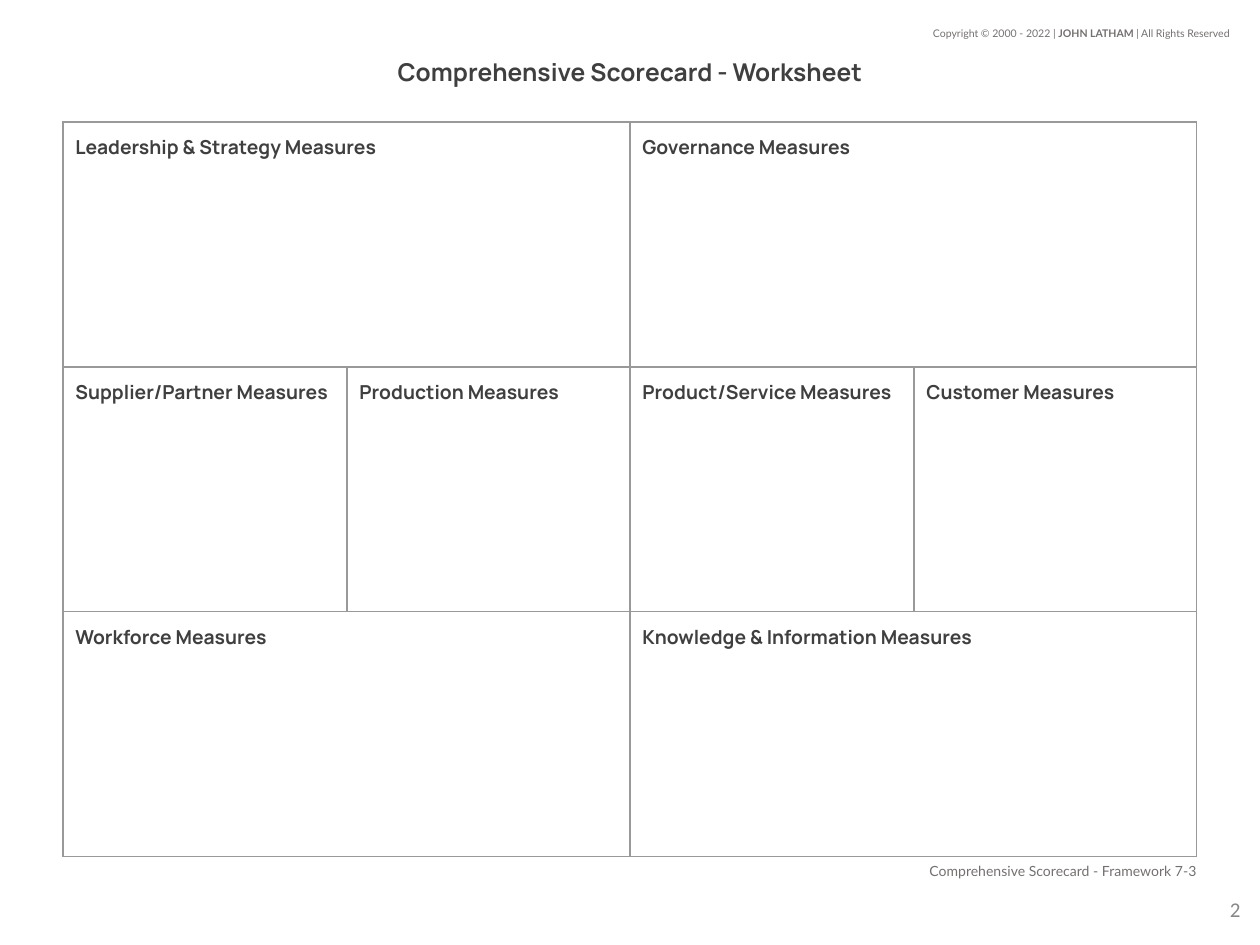
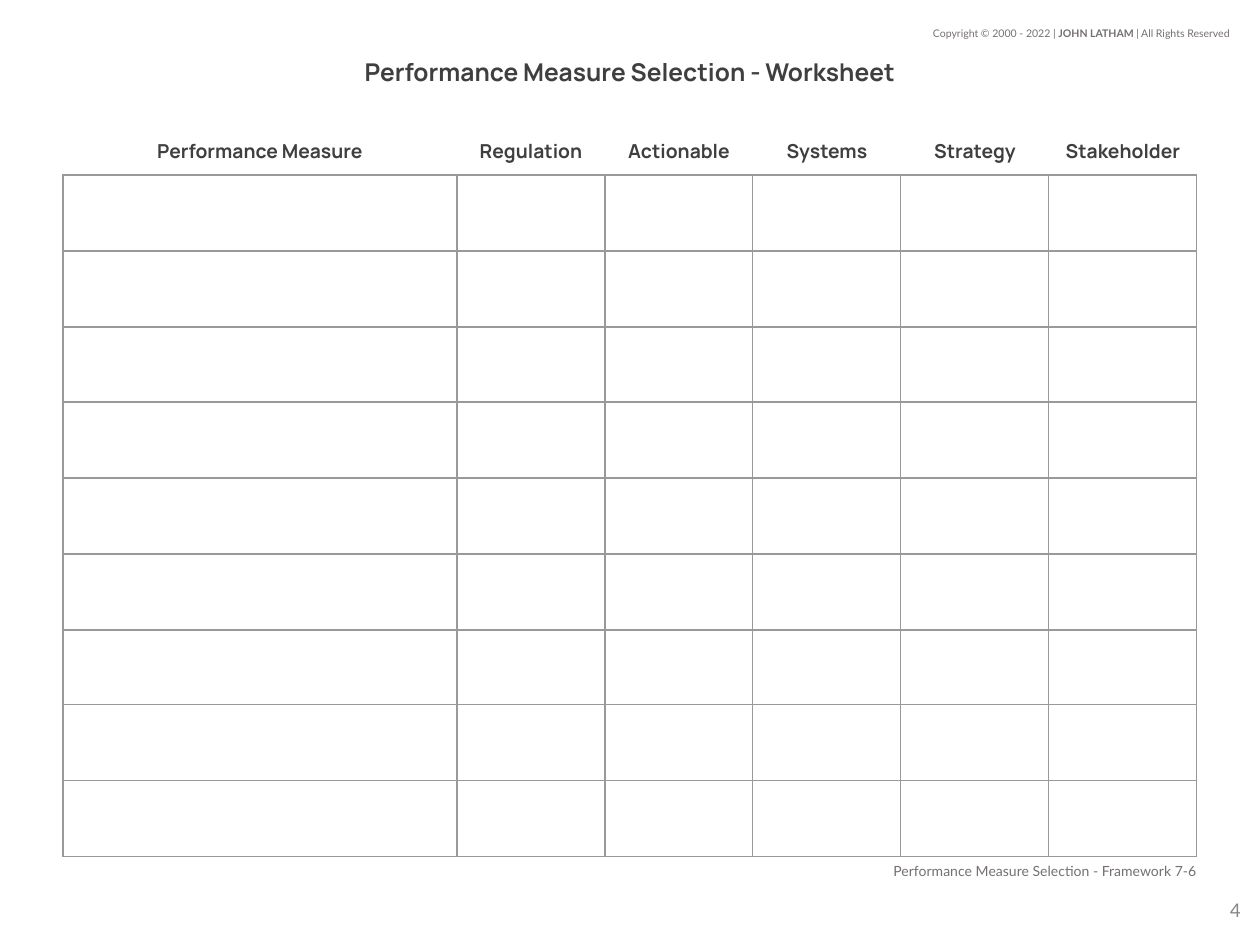
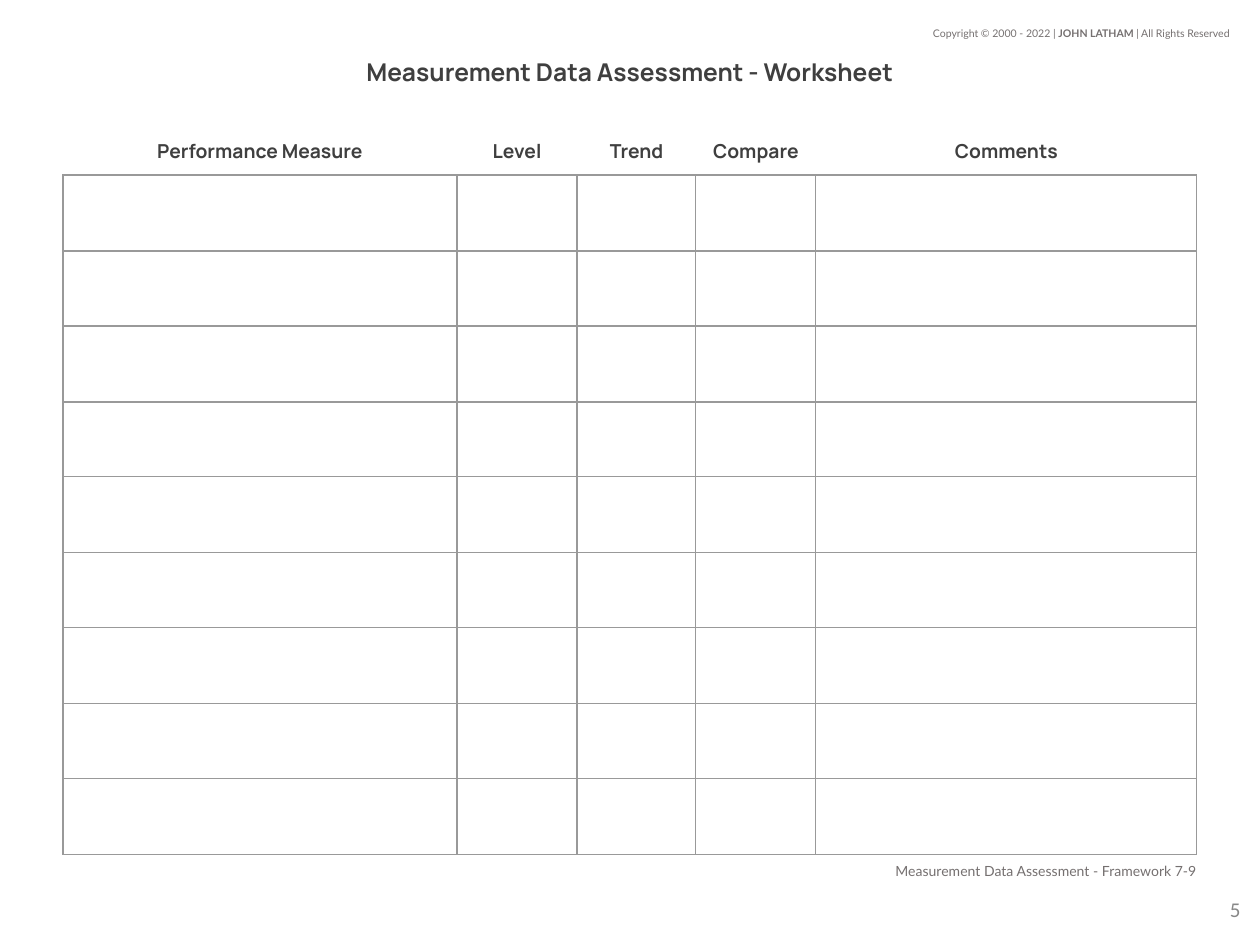
from itertools import accumulate

from lxml import etree
from pptx import Presentation
from pptx import util as u
from pptx.dml import color
from pptx.enum import text
from pptx.oxml import ns

PX = 914400 / 126
LEFT, CENTER, RIGHT = text.PP_ALIGN.LEFT, text.PP_ALIGN.CENTER, text.PP_ALIGN.RIGHT

# Theme: colours, type sizes and the rule around every cell
THEME = {
    "title": {"name": "Manrope", "size": u.Pt(14), "bold": True, "color": "3F3F3F"},
    "heading": {"name": "Manrope", "size": u.Pt(11), "bold": True, "color": "3F3F3F"},
    "caption": {"name": "Lato", "size": u.Pt(8), "color": "757070"},
    "copyright": {"name": "Lato", "size": u.Pt(6), "color": "757070"},
    "number": {"name": "Calibri", "size": u.Pt(12), "color": "888888"},
    "rule": {"color": "999999", "width": u.Pt(0.75)},
}
MARGIN, WIDTH, HEADING_HEIGHT = 63, 1134, 49
COPYRIGHT = [("Copyright © 2000 - 2022 | ", False), ("JOHN LATHAM ", True),
             ("| All Rights Reserved", False)]

# Worksheets: a heading is (text, row, first column, columns spanned)
WORKSHEETS = [
    {"name": "Comprehensive Scorecard", "framework": "7-3", "number": "2",
     "top": 122, "bottom": 857, "rows": 3, "columns": [284, 283, 284, 283],
     "merged": [(0, 0), (0, 2), (2, 0), (2, 2)],
     "heading_offset": 0, "align": LEFT,
     "headings": [("Leadership & Strategy Measures", 0, 0, 2),
                  ("Governance Measures", 0, 2, 2),
                  ("Supplier/Partner Measures", 1, 0, 1),
                  ("Production Measures", 1, 1, 1),
                  ("Product/Service Measures", 1, 2, 1),
                  ("Customer Measures", 1, 3, 1),
                  ("Workforce Measures", 2, 0, 2),
                  ("Knowledge & Information Measures", 2, 2, 2)]},
    {"name": "Performance Measure Selection", "framework": "7-6", "number": "4",
     "top": 175, "bottom": 857, "rows": 9, "columns": [394] + [148] * 5,
     "merged": [],
     "heading_offset": -HEADING_HEIGHT, "align": CENTER,
     "headings": [(label, 0, column, 1) for column, label in enumerate(
         ["Performance Measure", "Regulation", "Actionable", "Systems",
          "Strategy", "Stakeholder"])]},
    {"name": "Measurement Data Assessment", "framework": "7-9", "number": "5",
     "top": 175, "bottom": 855, "rows": 9, "columns": [394, 120, 119, 120, 233, 148],
     "merged": [(row, 4) for row in range(9)],
     "heading_offset": -HEADING_HEIGHT, "align": CENTER,
     "headings": [("Performance Measure", 0, 0, 1), ("Level", 0, 1, 1),
                  ("Trend", 0, 2, 1), ("Compare", 0, 3, 1), ("Comments", 0, 4, 2)]},
]


def add_text(page, place, spans, style, align, **frame_format):
    """Add a one-paragraph text box; spans are (text, bold) pairs or a string."""
    box = page.shapes.add_textbox(*(round(value * PX) for value in place))
    frame = box.text_frame
    frame_format = {"word_wrap": True, "vertical_anchor": text.MSO_ANCHOR.MIDDLE,
                    **frame_format}
    for name, value in frame_format.items():
        setattr(frame, name, value)
    para = frame.paragraphs[0]
    para.alignment = align
    if isinstance(spans, str):
        spans = [(spans, THEME[style].get("bold", False))]
    for words, bold in spans:
        span = para.add_run()
        span.text = words
        for name, value in {**THEME[style], "bold": bold}.items():
            if name == "color":
                span.font.color.rgb = color.RGBColor.from_string(value)
            else:
                setattr(span.font, name, value)


def rule_cell(cell):
    """Clear the fill of a cell and draw its four borders."""
    cell.fill.background()
    properties = cell._tc.get_or_add_tcPr()
    for index, side in enumerate(["lnL", "lnR", "lnT", "lnB"]):
        line = etree.Element(ns.qn("a:" + side), w=str(THEME["rule"]["width"]))
        fill = etree.SubElement(line, ns.qn("a:solidFill"))
        etree.SubElement(fill, ns.qn("a:srgbClr"), val=THEME["rule"]["color"])
        properties.insert(index, line)


deck = Presentation()
deck.slide_width, deck.slide_height = round(1260 * PX), round(945 * PX)

for sheet in WORKSHEETS:
    page = deck.slides.add_slide(deck.slide_layouts[6])

    # Copyright line, title and page number
    add_text(page, (917, 21, 325, 25), COPYRIGHT, "copyright", RIGHT,
             vertical_anchor=text.MSO_ANCHOR.TOP)
    add_text(page, (MARGIN, 53, WIDTH, 38), sheet["name"] + " - Worksheet",
             "title", CENTER)
    add_text(page, (1177, 873, 76, 72), sheet["number"], "number", RIGHT)

    # Grid: rows share the height evenly
    height = sheet["bottom"] - sheet["top"]
    row_edges = [sheet["top"] + round(height * row / sheet["rows"])
                 for row in range(sheet["rows"] + 1)]
    column_edges = list(accumulate(sheet["columns"], initial=MARGIN))
    table = page.shapes.add_table(
        sheet["rows"], len(sheet["columns"]),
        *(round(value * PX) for value in (MARGIN, sheet["top"], WIDTH, height))).table
    table.first_row = table.horz_banding = False
    for column, width in zip(table.columns, sheet["columns"]):
        column.width = round(width * PX)
    for row, upper, lower in zip(table.rows, row_edges, row_edges[1:]):
        row.height = round((lower - upper) * PX)
    for cell in table.iter_cells():
        rule_cell(cell)
    for row, column in sheet["merged"]:
        table.cell(row, column).merge(table.cell(row, column + 1))

    # Headings inside or above the cells
    for label, row, column, span in sheet["headings"]:
        left = column_edges[column]
        place = (left, row_edges[row] + sheet["heading_offset"],
                 column_edges[column + span] - left, HEADING_HEIGHT)
        add_text(page, place, label, "heading", sheet["align"])

    # Caption under the grid
    add_text(page, (MARGIN, 857, WIDTH, 27),
             f"{sheet['name']} - Framework {sheet['framework']}",
             "caption", RIGHT, margin_right=0)

deck.save("out.pptx")
